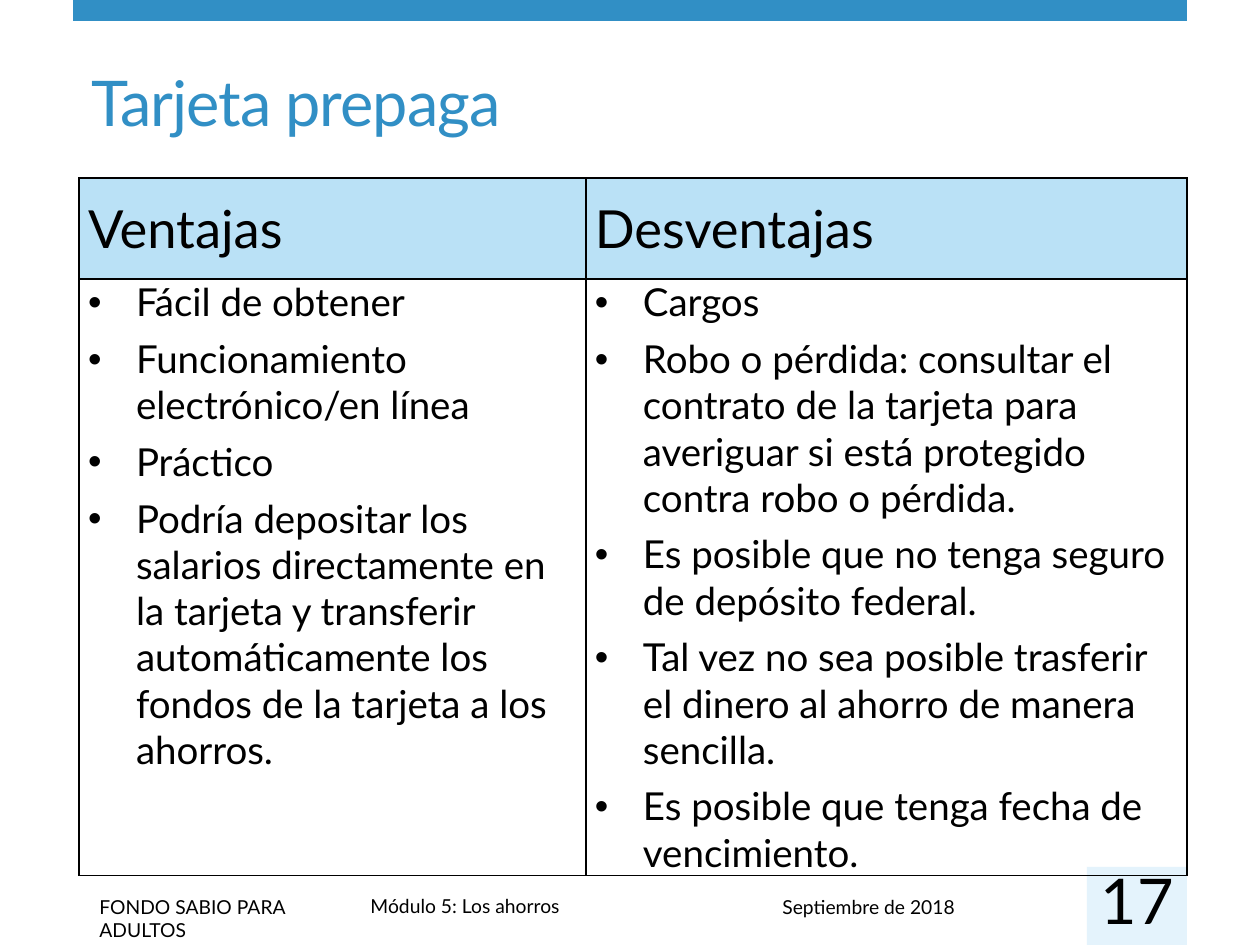
import pptx
import pptx.util
import pptx.dml.color
import pptx.enum.shapes
import pptx.enum.text
import pptx.oxml
import pptx.oxml.ns
from lxml import etree

FONT = "Lato"
BLUE, SKY, PALE, BLACK = "318FC5", "76C5EF", "E4F3FC", "000000"
TITLE = "Tarjeta prepaga"
COLUMNS = [
    ("Ventajas", 507, [
        "Fácil de obtener",
        "Funcionamiento electrónico/en línea",
        "Práctico",
        "Podría depositar los salarios directamente en la tarjeta y "
        "transferir automáticamente los fondos de la tarjeta a los ahorros.",
    ]),
    ("Desventajas", 601, [
        "Cargos",
        "Robo o pérdida: consultar el contrato de la tarjeta para averiguar "
        "si está protegido contra robo o pérdida.",
        "Es posible que no tenga seguro de depósito federal.",
        "Tal vez no sea posible trasferir el dinero al ahorro de manera sencilla.",
        "Es posible que tenga fecha de vencimiento.",
    ]),
]
ROWS = (101, 596)
# text, left, top, width, height
FOOTERS = [
    ("FONDO SABIO PARA ADULTOS", 87, 889, 263, 37),
    ("Módulo 5: Los ahorros", 358, 888, 713, 37),
    ("Septiembre de 2018", 770, 889, 317, 37),
]
BARS = [(BLUE, 73, 0, 1114, 21), (PALE, 1087, 867, 100, 78)]
NUMBER = ("17", 1087, 861, 100, 57)

Pt = pptx.util.Pt
ALIGN = pptx.enum.text.PP_ALIGN
ANCHOR = pptx.enum.text.MSO_ANCHOR


def px(*values):
    """Turn px into EMU, at 126 px to the inch."""
    return [pptx.util.Emu(round(v * 914400 / 126)) for v in values]


def color(code):
    return pptx.dml.color.RGBColor.from_string(code)


def style(para, size, code=BLACK):
    para.font.name = FONT
    para.font.size = Pt(size)
    para.font.color.rgb = color(code)


def add(parent, tag, **attrs):
    return etree.SubElement(parent, pptx.oxml.ns.qn(tag), attrs)


def bullet(para):
    props = para._p.get_or_add_pPr()
    indent = px(48)[0]
    props.set("marL", str(indent))
    props.set("indent", str(-indent))
    add(props, "a:buFont", typeface="Arial")
    add(props, "a:buChar", char="•")


def border(cell):
    props = cell._tc.get_or_add_tcPr()
    for i, side in enumerate("LRTB"):
        line = add(props, "a:ln" + side, w=str(Pt(1)))
        add(add(line, "a:solidFill"), "a:srgbClr", val=BLACK)
        props.insert(i, line)


def fill_cell(cell, texts, size, after, dots):
    cell.margin_left, cell.margin_right = px(9, 9)
    cell.margin_top = cell.margin_bottom = 0
    frame = cell.text_frame
    frame.text = "\n".join(texts)
    for para in frame.paragraphs:
        para.space_after = Pt(after)
        if dots:
            bullet(para)
        style(para, size)


def add_label(slide, text, *box):
    frame = slide.shapes.add_textbox(*px(*box)).text_frame
    frame.word_wrap = True
    frame.text = text
    return frame


def add_title(slide):
    title = slide.shapes.title
    title.left, title.top, title.width, title.height = px(79, 24, 1033, 121)
    frame = title.text_frame
    frame.text = TITLE
    frame.auto_size = pptx.enum.text.MSO_AUTO_SIZE.NONE
    frame.vertical_anchor = ANCHOR.BOTTOM
    para = frame.paragraphs[0]
    para.alignment = ALIGN.LEFT
    style(para, 36, BLUE)
    para.runs[0]._r.get_or_add_rPr().set("spc", "-60")


def add_grid(slide):
    width = sum(col[1] for col in COLUMNS)
    box = px(79, 178, width, sum(ROWS))
    table = slide.shapes.add_table(len(ROWS), len(COLUMNS), *box).table
    table.first_row = table.horz_banding = False
    for row, height in zip(table.rows, px(*ROWS)):
        row.height = height
    for i, (name, wide, points) in enumerate(COLUMNS):
        table.columns[i].width = px(wide)[0]
        head, body = table.cell(0, i), table.cell(1, i)
        fill_cell(head, [name], 30, 12, False)
        head.vertical_anchor = ANCHOR.MIDDLE
        head.fill.solid()
        head.fill.fore_color.rgb = color(SKY)
        tint = head._tc.tcPr.find(".//" + pptx.oxml.ns.qn("a:srgbClr"))
        add(tint, "a:alpha", val="50000")
        fill_cell(body, points, 22, 6, True)
        body.fill.background()
        border(head)
        border(body)


def main():
    deck = pptx.Presentation()
    deck.slide_width, deck.slide_height = px(1260, 945)
    slide = deck.slides.add_slide(deck.slide_layouts[5])
    for code, *box in BARS:
        kind = pptx.enum.shapes.MSO_SHAPE.RECTANGLE
        bar = slide.shapes.add_shape(kind, *px(*box))
        bar.shadow.inherit = False
        bar.fill.solid()
        bar.fill.fore_color.rgb = color(code)
        bar.line.fill.background()
    for footer in FOOTERS:
        style(add_label(slide, *footer).paragraphs[0], 11)
    add_title(slide)
    add_grid(slide)
    frame = add_label(slide, *NUMBER)
    frame.margin_left = frame.margin_right = 0
    frame.margin_top = frame.margin_bottom = 0
    frame.paragraphs[0].alignment = ALIGN.CENTER
    style(frame.paragraphs[0], 36)
    deck.save("out.pptx")


if __name__ == "__main__":
    main()
